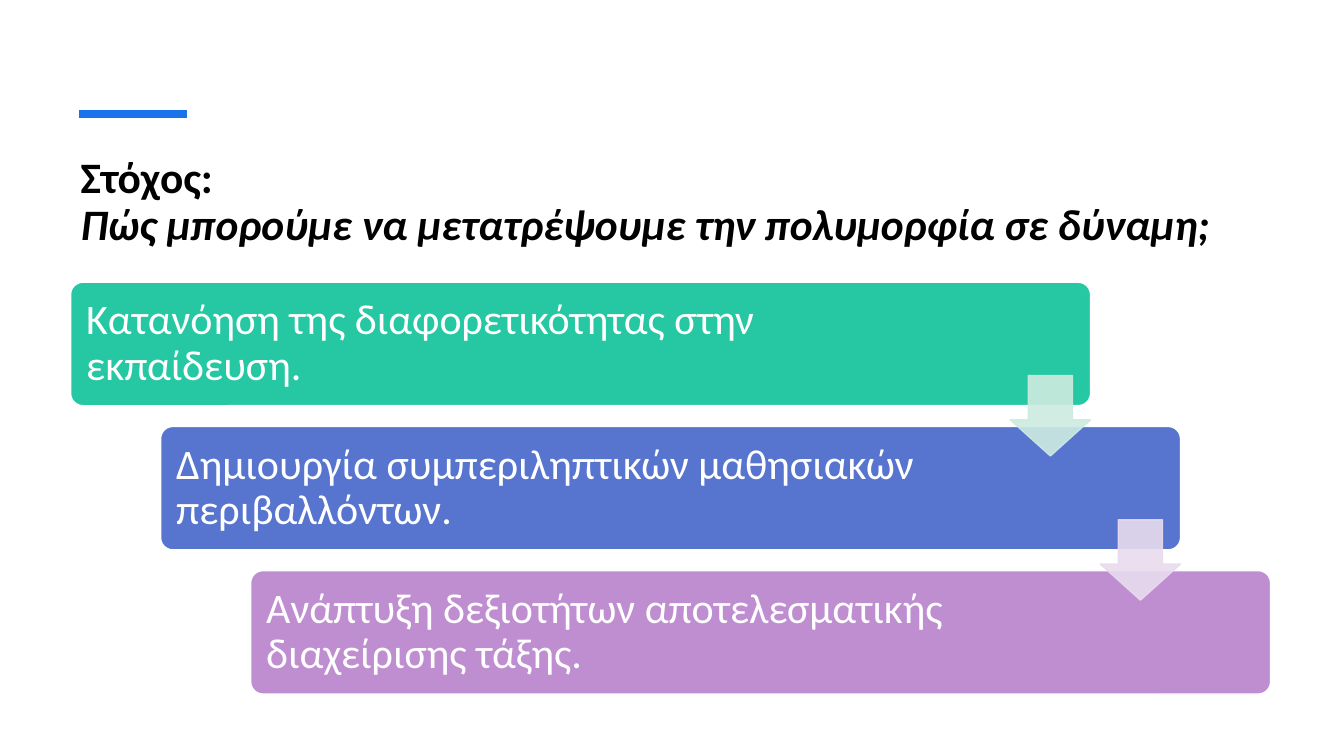
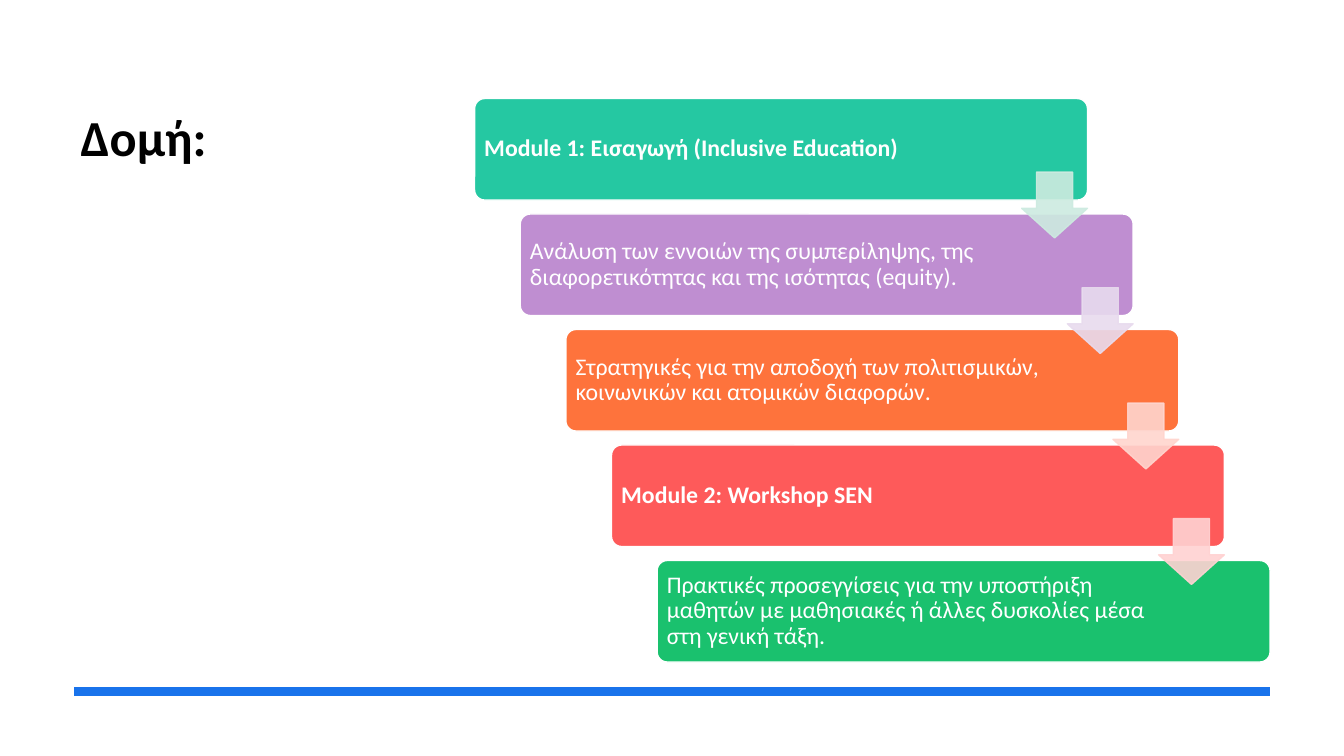
from pptx import Presentation
from pptx.dml.color import RGBColor
from pptx.enum.shapes import MSO_CONNECTOR, MSO_SHAPE
from pptx.enum.text import MSO_ANCHOR, MSO_AUTO_SIZE, PP_ALIGN
from pptx.oxml.ns import qn
from pptx.util import Pt
from lxml.etree import SubElement

BLACK = RGBColor(0x00, 0x00, 0x00)
WHITE = RGBColor(0xFF, 0xFF, 0xFF)
BLUE = RGBColor(0x19, 0x73, 0xEB)
TEAL = RGBColor(0x25, 0xC8, 0xA2)
INDIGO = RGBColor(0x57, 0x75, 0xCF)
PURPLE = RGBColor(0xBF, 0x8E, 0xD1)
ORANGE = RGBColor(0xFE, 0x73, 0x3C)
RED = RGBColor(0xFE, 0x5A, 0x5A)
GREEN = RGBColor(0x1A, 0xC1, 0x6E)
MINT = RGBColor(0xCD, 0xEB, 0xE0)
LILAC = RGBColor(0xE8, 0xDB, 0xEE)
PEACH = RGBColor(0xFF, 0xD5, 0xCE)
PINK = RGBColor(0xFF, 0xD2, 0xD2)


def write(para, text, size, color=WHITE, bold=False, italic=False, face="Calibri"):
    run = para.add_run()
    run.text = text
    font = run.font
    font.name, font.size = face, Pt(size)
    font.bold, font.italic = bold, italic
    font.color.rgb = color


class Deck:
    def __init__(self):
        self.file = Presentation()
        self.file.slide_width, self.file.slide_height = Pt(960), Pt(540)
        self.slide = None

    def start(self):
        layout = self.file.slide_layouts.get_by_name("Title Only")
        self.slide = self.file.slides.add_slide(layout)

    def title(self, lines, left, top, width, height, size, space=1.0):
        shape = self.slide.shapes.title
        shape.left, shape.top = Pt(left), Pt(top)
        shape.width, shape.height = Pt(width), Pt(height)
        frame = shape.text_frame
        frame.word_wrap = True
        frame.auto_size = MSO_AUTO_SIZE.NONE
        frame.vertical_anchor = MSO_ANCHOR.TOP
        para = frame.paragraphs[0]
        para.alignment = PP_ALIGN.LEFT
        para.line_spacing = space
        for row, text in enumerate(lines):
            if row:
                para.add_line_break()
            write(para, text, size, color=BLACK, bold=True, italic=row > 0)

    def rule(self, left, right, top):
        line = self.slide.shapes.add_connector(
            MSO_CONNECTOR.STRAIGHT, Pt(left), Pt(top), Pt(right), Pt(top))
        line.line.color.rgb = BLUE
        line.line.width = Pt(6)
        SubElement(line._element.spPr, qn("a:effectLst"))

    def shape(self, kind, left, top, width, height, fill, edge):
        shape = self.slide.shapes.add_shape(
            kind, Pt(left), Pt(top), Pt(width), Pt(height))
        shape.shadow.inherit = False
        shape.fill.solid()
        shape.fill.fore_color.rgb = fill
        shape.line.color.rgb = edge
        shape.line.width = Pt(1)
        return shape

    def box(self, text, left, top, width, height, fill, size, inset, right, bold):
        shape = self.shape(MSO_SHAPE.ROUNDED_RECTANGLE, left, top, width, height,
                           fill, WHITE)
        shape.adjustments[0] = 0.1
        frame = shape.text_frame
        frame.word_wrap = True
        frame.vertical_anchor = MSO_ANCHOR.MIDDLE
        frame.margin_left = frame.margin_top = frame.margin_bottom = Pt(inset)
        frame.margin_right = Pt(right)
        para = frame.paragraphs[0]
        para.alignment = PP_ALIGN.LEFT
        para.line_spacing = 0.9
        write(para, text, size, bold=bold)

    def arrow(self, left, top, size, color):
        shape = self.shape(MSO_SHAPE.DOWN_ARROW, left, top, size, size, color, color)
        shape.adjustments[0], shape.adjustments[1] = 0.55, 0.45
        for tone in shape._element.spPr.iter(qn("a:srgbClr")):
            SubElement(tone, qn("a:alpha")).set("val", "90000")

    def stairs(self, steps, tints, left, top, width, height, across, down,
               drop, head, size, inset, right):
        for row, (text, fill, bold) in enumerate(steps):
            self.box(text, left + row * across, top + row * down, width, height,
                     fill, size, inset, right, bold)
        for row, tint in enumerate(tints):
            self.arrow(left + row * across + width - head,
                       top + row * down + drop, head, tint)


def main():
    deck = Deck()

    deck.start()
    deck.title(["Στόχος:", "Πώς μπορούμε να μετατρέψουμε την πολυμορφία σε δύναμη;"],
               50.4, 108, 857.5, 86.4, size=31, space=0.9)
    deck.rule(56.5, 133.5, 81.5)
    deck.stairs(
        [("Κατανόηση της διαφορετικότητας στην εκπαίδευση.", TEAL, False),
         ("Δημιουργία συμπεριληπτικών μαθησιακών περιβαλλόντων.", INDIGO, False),
         ("Ανάπτυξη δεξιοτήτων αποτελεσματικής διαχείρισης τάξης.", PURPLE, False)],
        [MINT, LILAC],
        left=50.4, top=201.6, width=728.6, height=88.2, across=64.3, down=103,
        drop=66.7, head=57.4, size=30, inset=8.6, right=129)

    deck.start()
    deck.title(["Δομή:"], 50.4, 72, 236, 327.6, size=36)
    deck.rule(53, 907, 494)
    deck.stairs(
        [("Module 1: Εισαγωγή (Inclusive Education)", TEAL, True),
         ("Ανάλυση των εννοιών της συμπερίληψης, της διαφορετικότητας "
          "και της ισότητας (equity).", PURPLE, False),
         ("Στρατηγικές για την αποδοχή των πολιτισμικών, κοινωνικών "
          "και ατομικών διαφορών.", ORANGE, False),
         ("Module 2: Workshop SEN", RED, True),
         ("Πρακτικές προσεγγίσεις για την υποστήριξη μαθητών με μαθησιακές "
          "ή άλλες δυσκολίες μέσα στη γενική τάξη.", GREEN, False)],
        [MINT, LILAC, PEACH, PINK],
        left=339, top=70.4, width=437.8, height=72.5, across=32.6, down=82.5,
        drop=52.6, head=47, size=17, inset=4.8, right=80)

    deck.file.save("out.pptx")


if __name__ == "__main__":
    main()
